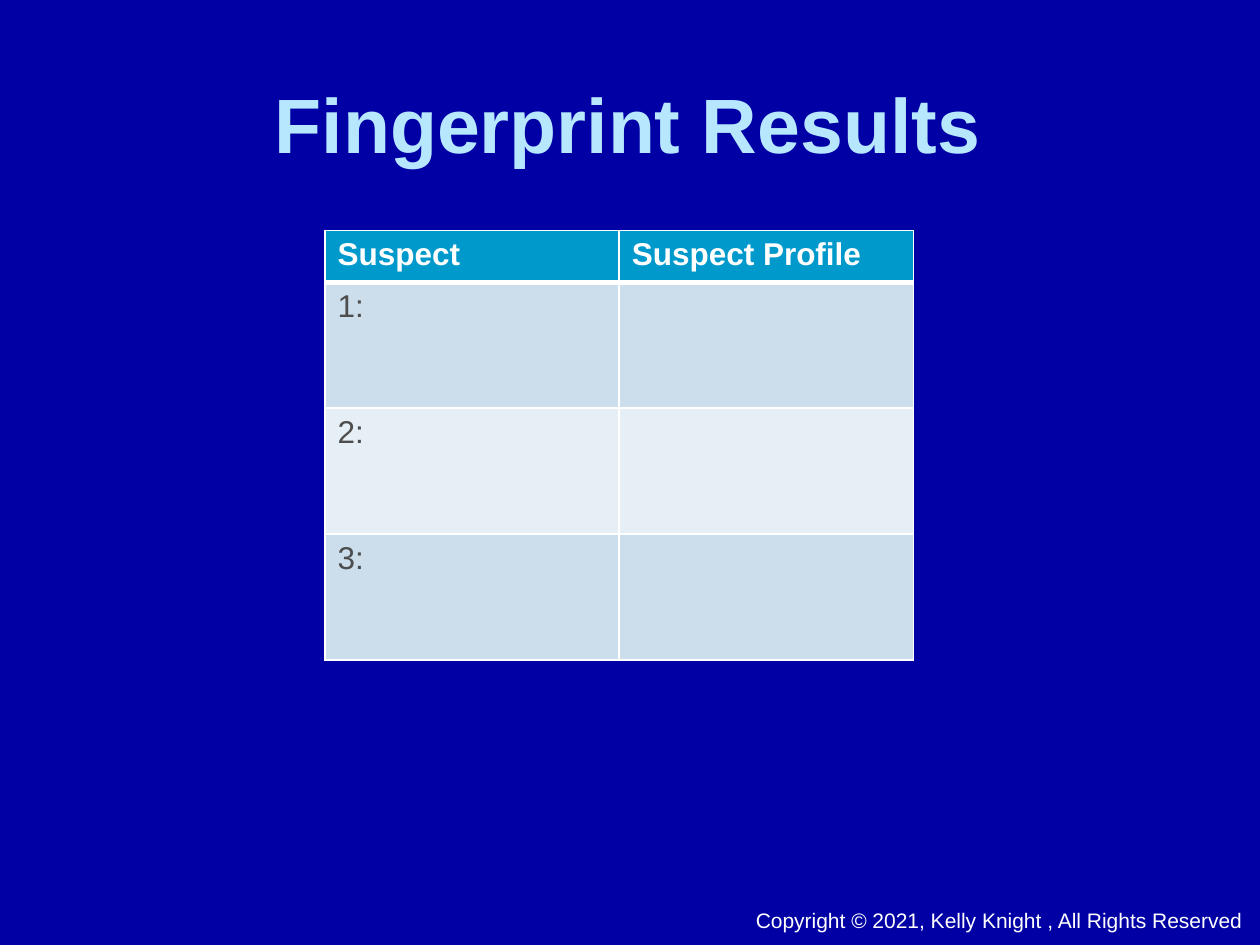
from lxml import etree
from pptx import Presentation
from pptx.dml.color import RGBColor
from pptx.enum.text import MSO_ANCHOR, PP_ALIGN
from pptx.oxml.ns import qn
from pptx.util import Inches, Pt

MIDDLE = MSO_ANCHOR.MIDDLE
LEFT, CENTER = PP_ALIGN.LEFT, PP_ALIGN.CENTER

FONT = "Arial"
NAVY, PALE_BLUE, WHITE, GREY = "0000A4", "B7E7FF", "FFFFFF", "4D4D4D"
HEADER_FILL = "0099CC"
BAND_FILLS = ["CCDEEC", "E7EFF6"]
ROWS = [["Suspect", "Suspect Profile"], ["1:", ""], ["2:", ""], ["3:", ""]]
HEADER_HEIGHT = 0.41


def color(value):
    return RGBColor.from_string(value)


def write(tf, text, size, hex_color, bold=False, align=LEFT):
    p = tf.paragraphs[0]
    p.alignment = align
    r = p.add_run()
    r.text = text
    formats = {"name": FONT, "size": Pt(size), "bold": bold}
    for name, value in formats.items():
        setattr(r.font, name, value)
    r.font.color.rgb = color(hex_color)


def add_text(s, box, text, size, hex_color, wrap=True, anchor=None, **style):
    tf = s.shapes.add_textbox(*map(Inches, box)).text_frame
    tf.word_wrap = wrap
    if anchor is not None:
        tf.vertical_anchor = anchor
    write(tf, text, size, hex_color, **style)


def set_borders(cell, widths):
    # Borders come before the fill in the cell properties
    tc_pr = cell._tc.get_or_add_tcPr()
    for i, (side, width) in enumerate(widths.items()):
        ln = etree.Element(qn(f"a:ln{side}"), w=str(Pt(width)))
        fill = etree.SubElement(ln, qn("a:solidFill"))
        etree.SubElement(fill, qn("a:srgbClr"), val=WHITE)
        tc_pr.insert(i, ln)


def add_results_table(s, box):
    left, top, width, height = box
    table = s.shapes.add_table(len(ROWS), len(ROWS[0]), *map(Inches, box)).table
    for column in table.columns:
        column.width = Inches(width / len(ROWS[0]))
    body_height = (height - HEADER_HEIGHT) / (len(ROWS) - 1)

    for i, texts in enumerate(ROWS):
        header = i == 0
        table.rows[i].height = Inches(HEADER_HEIGHT if header else body_height)
        for j, text in enumerate(texts):
            cell = table.cell(i, j)
            cell.fill.solid()
            cell.fill.fore_color.rgb = color(
                HEADER_FILL if header else BAND_FILLS[(i - 1) % 2])
            set_borders(cell, {"L": 1, "R": 1, "T": 3 if i == 1 else 1,
                               "B": 3 if header else 1})
            if text:
                write(cell.text_frame, text, 18,
                      WHITE if header else GREY, bold=header)


def main():
    prs = Presentation()
    prs.slide_width, prs.slide_height = Inches(10), Inches(7.5)
    s = prs.slides.add_slide(prs.slide_layouts[6])
    s.background.fill.solid()
    s.background.fill.fore_color.rgb = color(NAVY)

    # Title
    add_text(s, (0.33, 0.25, 9.31, 1.45), "Fingerprint Results", 44, PALE_BLUE,
             anchor=MIDDLE, bold=True, align=CENTER)
    # Suspect table
    add_results_table(s, (2.58, 1.83, 4.67, 3.41))
    # Copyright line
    add_text(s, (5.9, 7.15, 4.1, 0.3),
             "Copyright © 2021, Kelly Knight , All Rights Reserved", 12, WHITE,
             wrap=False)

    prs.save("out.pptx")


if __name__ == "__main__":
    main()
